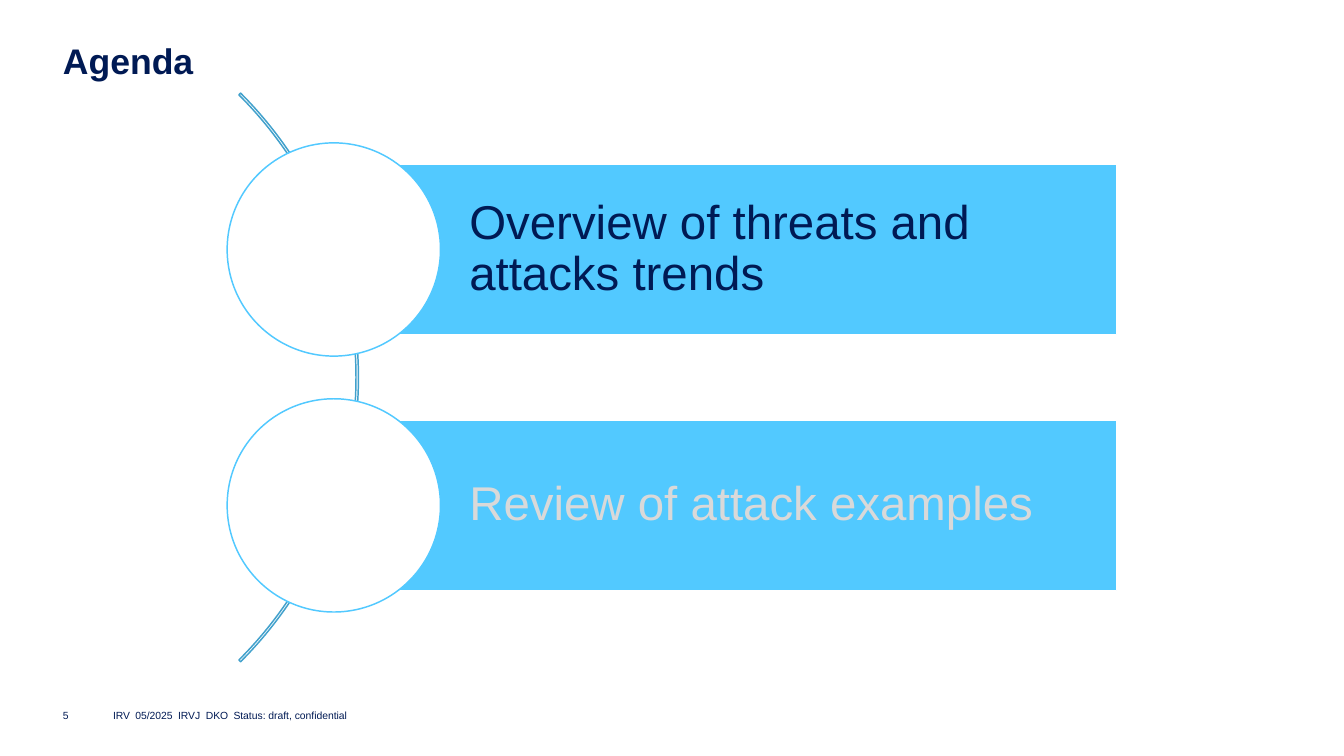
from lxml.etree import SubElement
from pptx import Presentation
from pptx.dml.color import RGBColor
from pptx.enum.shapes import MSO_SHAPE
from pptx.enum.text import MSO_ANCHOR, MSO_AUTO_SIZE, PP_ALIGN
from pptx.oxml.ns import qn
from pptx.util import Inches, Pt

COLORS = {
    "navy": "001A54",
    "sky": "52C9FF",
    "arc": "42A1CC",
    "muted": "D9D9D9",
    "white": "FFFFFF",
}
FONT = "Arial"
AGENDA = [
    ("Overview of threats and attacks trends", "navy"),
    ("Review of attack examples", "muted"),
]
FOOTER = ["IRV", "05/2025", "IRVJ", "DKO", "Status: draft, confidential"]
FOOTER_STOPS = [0.21, 0.61, 0.87, 1.13]


def color(name):
    return RGBColor.from_string(COLORS[name])


def set_text(shape, text, size, color_name, anchor=MSO_ANCHOR.MIDDLE,
             margins=(0, 0, 0, 0), line_spacing=1.0, bold=False, stops=()):
    frame = shape.text_frame
    frame.word_wrap = True
    frame.auto_size = MSO_AUTO_SIZE.NONE
    frame.vertical_anchor = anchor
    (frame.margin_left, frame.margin_top,
     frame.margin_right, frame.margin_bottom) = map(Inches, margins)
    paragraph = frame.paragraphs[0]
    paragraph.text = text
    paragraph.alignment = PP_ALIGN.LEFT
    paragraph.line_spacing = line_spacing
    if stops:
        tabs = SubElement(paragraph._p.get_or_add_pPr(), qn("a:tabLst"))
        for stop in stops:
            SubElement(tabs, qn("a:tab"), pos=str(Inches(stop)), algn="l")
    font = paragraph.font
    font.name = FONT
    font.size = Pt(size)
    font.bold = bold
    font.color.rgb = color(color_name)


def add_shape(page, kind, box, line, fill=None):
    shape = page.shapes.add_shape(kind, *map(Inches, box))
    shape.shadow.inherit = False
    if fill:
        shape.fill.solid()
        shape.fill.fore_color.rgb = color(fill)
    else:
        shape.fill.background()
    shape.line.color.rgb = color(line)
    shape.line.width = Pt(1)
    return shape


def add_title(page, box, text):
    title = page.shapes.title
    title.left, title.top, title.width, title.height = map(Inches, box)
    set_text(title, text, 24, "navy", MSO_ANCHOR.TOP, line_spacing=0.97, bold=True)


def add_agenda_item(page, box, text, color_name):
    left, top, width, height = box
    diameter = height * 1.25
    radius = diameter / 2
    bar = add_shape(page, MSO_SHAPE.RECTANGLE, box, "white", "sky")
    set_text(bar, text, 32, color_name, margins=(1.27, 0.09, 0.09, 0.09),
             line_spacing=0.9)
    circle = (left - radius, top + height / 2 - radius, diameter, diameter)
    add_shape(page, MSO_SHAPE.OVAL, circle, "sky", "white")


def add_agenda(page, box):
    left, top, width, height = box
    bar_height = 1.6
    pitch = (height - bar_height) / (len(AGENDA) - 1)
    arc_size = 7.54
    arc_top = top + (height - arc_size) / 2
    arc = add_shape(page, MSO_SHAPE.BLOCK_ARC,
                    (left - 7.31, arc_top, arc_size, arc_size), "arc")
    for index, value in enumerate((189, 27, 0.003)):
        arc.adjustments[index] = value
    for index, (text, color_name) in enumerate(AGENDA):
        item_box = (left, top + index * pitch, width, bar_height)
        add_agenda_item(page, item_box, text, color_name)


def add_footer(page, box, number):
    left, top, width, height = box
    indent = 0.47
    number_box = page.shapes.add_textbox(*map(Inches, (left, top, 0.39, height)))
    set_text(number_box, number, 7, "navy")
    status_box = page.shapes.add_textbox(
        *map(Inches, (left + indent, top, width - indent, height)))
    set_text(status_box, "\t".join(FOOTER), 7, "navy", stops=FOOTER_STOPS)


def main():
    deck = Presentation()
    deck.slide_width = Inches(12.6)
    deck.slide_height = Inches(7.09)
    page = deck.slides.add_slide(deck.slide_layouts[5])
    add_title(page, (0.59, 0.39, 11.42, 0.4), "Agenda")
    add_agenda(page, (3.13, 1.54, 7.34, 4))
    add_footer(page, (0.59, 6.61, 5.51, 0.2), "5")
    deck.save("out.pptx")


if __name__ == "__main__":
    main()
